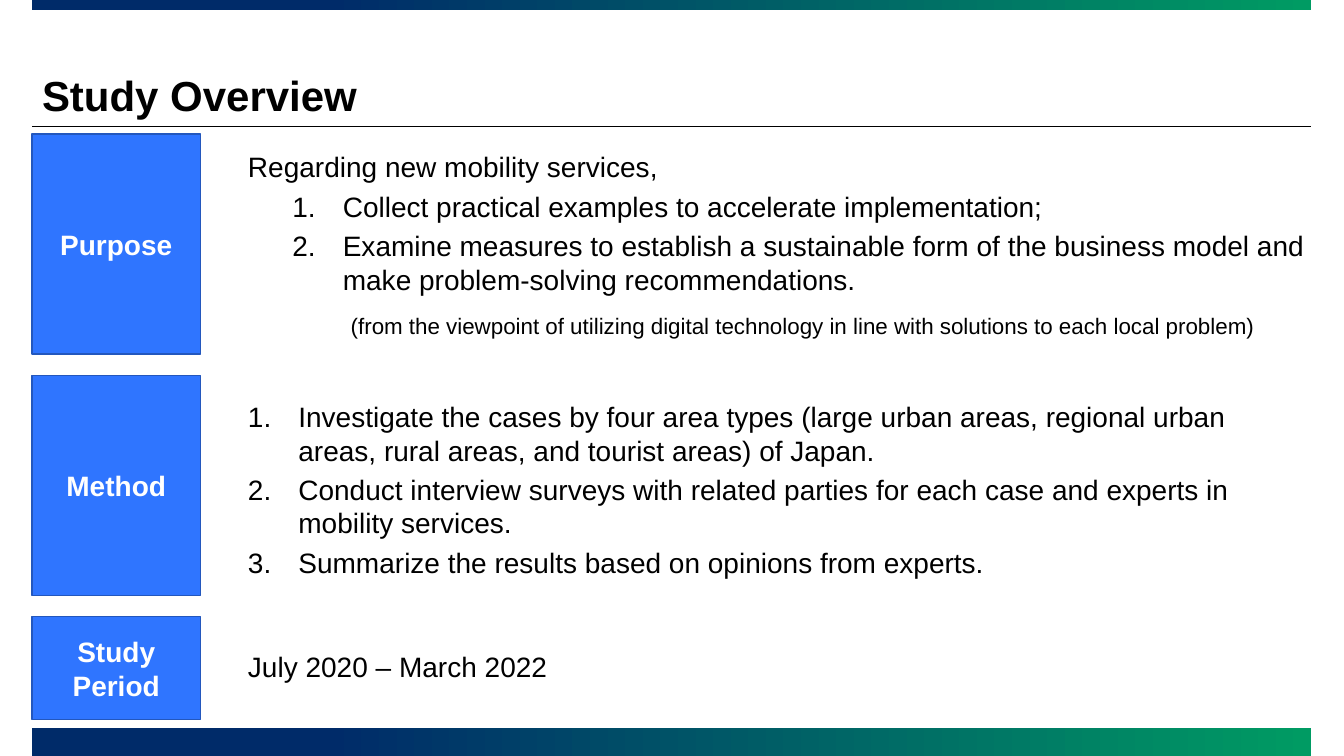
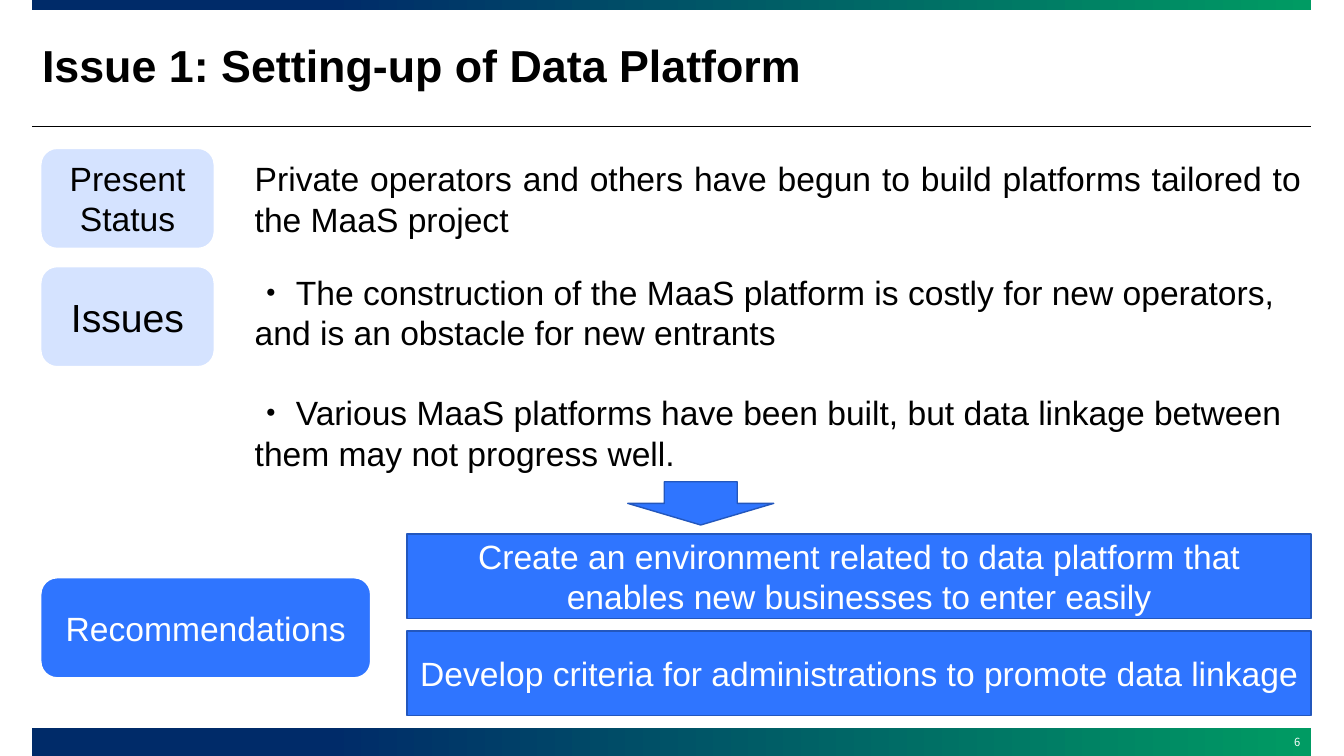
from lxml import etree
from pptx import Presentation
from pptx.dml.color import RGBColor
from pptx.enum.shapes import MSO_CONNECTOR, MSO_SHAPE
from pptx.enum.text import MSO_ANCHOR, PP_ALIGN
from pptx.oxml.ns import qn
from pptx.util import Cm, Pt

RECT, ROUNDED, DOWN_ARROW = MSO_SHAPE.RECTANGLE, MSO_SHAPE.ROUNDED_RECTANGLE, MSO_SHAPE.DOWN_ARROW
STRAIGHT = MSO_CONNECTOR.STRAIGHT
MIDDLE, BOTTOM, TOP = MSO_ANCHOR.MIDDLE, MSO_ANCHOR.BOTTOM, MSO_ANCHOR.TOP
LEFT, CENTER, RIGHT, JUSTIFY = PP_ALIGN.LEFT, PP_ALIGN.CENTER, PP_ALIGN.RIGHT, PP_ALIGN.JUSTIFY

NAVY = RGBColor(0x00, 0x2B, 0x69)
GREEN = RGBColor(0x00, 0x9B, 0x63)
BLUE = RGBColor(0x2F, 0x75, 0xFF)
EDGE_BLUE = RGBColor(0x23, 0x57, 0xBD)
PALE_BLUE = RGBColor(0xD5, 0xE3, 0xFF)
BLACK = RGBColor(0x00, 0x00, 0x00)
WHITE = RGBColor(0xFF, 0xFF, 0xFF)

LATIN, CJK = "Arial", "Noto Sans CJK JP"
MARK = "・"
EDGE, SPAN = 0.81, 32.23  # left edge and width of the page frame, cm
TIGHT = (0.15, 0.08, 0.15, 0.08)  # left, top, right, bottom insets, cm
NORMAL = (0.25, 0.13, 0.25, 0.13)


class Deck:
    """Holds the shared style and the slide being built."""

    def __init__(self):
        self.prs = Presentation()
        self.prs.slide_width, self.prs.slide_height = Cm(33.87), Cm(19.05)
        self.shapes = None

    def new_slide(self, title, size, anchor, width=SPAN, number=None):
        self.shapes = self.prs.slides.add_slide(self.prs.slide_layouts[6]).shapes
        self.band(0, 0.25)
        self.rule(3.18)
        self.band(18.35, 0.7)
        self.text((EDGE, 0.23, width, 2.95), [title], size, anchor=anchor,
                  bold=True, line_spacing=0.9)
        if number:
            self.text((26.75, 18.21, 6.27, 0.84), [number], 8, insets=(0.25, 0.13, 0.25, 0),
                      color=WHITE, name=CJK, alignment=RIGHT)

    def band(self, top, height):
        band = self.shape(RECT, (EDGE, top, SPAN, height))
        band.fill.gradient()
        band.fill.gradient_angle = 0
        for stop, color, position in zip(band.fill.gradient_stops, (NAVY, GREEN), (0.23, 1)):
            stop.color.rgb = color
            stop.position = position

    def rule(self, y):
        rule = self.shapes.add_connector(STRAIGHT, Cm(EDGE), Cm(y), Cm(EDGE + SPAN), Cm(y))
        rule.line.color.rgb = BLACK
        rule.line.width = Pt(0.5)
        etree.SubElement(rule._element.spPr, qn("a:effectLst"))

    def shape(self, kind, place, fill=None, line=None, weight=1):
        shape = self.shapes.add_shape(kind, *map(Cm, place))
        shape.shadow.inherit = False
        if fill is not None:
            shape.fill.solid()
            shape.fill.fore_color.rgb = fill
        if line is None:
            shape.line.fill.background()
        else:
            shape.line.color.rgb = line
            shape.line.width = Pt(weight)
        return shape

    def box(self, place, label, size, bold=False):
        box = self.shape(RECT, place, BLUE, EDGE_BLUE)
        self.set_text(box.text_frame, [label], size, color=WHITE, bold=bold, alignment=CENTER)

    def pill(self, place, label, size=24, fill=PALE_BLUE, color=BLACK):
        pill = self.shape(ROUNDED, place, fill, WHITE, 1.5)
        self.set_text(pill.text_frame, [label], size, color=color, alignment=CENTER)

    def text(self, place, paragraphs, size, **style):
        frame = self.shapes.add_textbox(*map(Cm, place)).text_frame
        self.set_text(frame, paragraphs, size, **style)

    def set_text(self, frame, paragraphs, size, anchor=MIDDLE, insets=NORMAL, color=BLACK,
                 bold=False, name=LATIN, alignment=LEFT, line_spacing=None, gap=0,
                 numbered_from=None, margin=1.27):
        frame.word_wrap = True
        frame.vertical_anchor = anchor
        for side, inset in zip(("left", "top", "right", "bottom"), insets):
            setattr(frame, f"margin_{side}", Cm(inset))
        font_format = {"size": Pt(size), "bold": bold, "name": name}
        for index, content in enumerate(paragraphs):
            paragraph = frame.add_paragraph() if index else frame.paragraphs[0]
            if numbered_from is not None and index >= numbered_from:
                self.number(paragraph, margin)
            paragraph_format = {"alignment": alignment, "line_spacing": line_spacing,
                                "space_before": Pt(gap if index else 0)}
            for key, value in paragraph_format.items():
                setattr(paragraph, key, value)
            # A leading mark gets its own run in the CJK font
            mark, words = (MARK, content[1:]) if content.startswith(MARK) else ("", content)
            for part in filter(None, (mark, words)):
                run = paragraph.add_run()
                run.text = part
                for key, value in font_format.items():
                    setattr(run.font, key, value)
                run.font.color.rgb = color
                if part == MARK:
                    run.font.name = CJK
                    etree.SubElement(run._r.get_or_add_rPr(), qn("a:ea"), typeface=CJK)

    @staticmethod
    def number(paragraph, margin):
        properties = paragraph._p.get_or_add_pPr()
        properties.set("marL", str(Cm(margin)))
        properties.set("indent", str(-Cm(1.27)))
        etree.SubElement(properties, qn("a:buAutoNum"), type="arabicPeriod")


def study_overview(deck):
    deck.new_slide("Study Overview", 30, BOTTOM, width=28.83)

    # Section labels
    top = 3.38
    for label, height in (("Purpose", 5.54), ("Method", 5.54), ("Study Period", 2.59)):
        deck.box((EDGE, top, 4.24, height), label, 20, bold=True)
        top += height + 0.54

    # Section contents
    body = {"size": 20, "insets": TIGHT, "gap": 4}
    deck.text((6.1, 3.94, 26.95, 3.35), [
        "Regarding new mobility services,",
        "Collect practical examples to accelerate implementation;",
        "Examine measures to establish a sustainable form of the business model and "
        "make problem-solving recommendations.",
    ], numbered_from=1, margin=2.39, **body)
    deck.text((8.69, 7.52, 24.08, 1.35), [
        "(from the viewpoint of utilizing digital technology in line with solutions "
        "to each local problem)",
    ], 16, insets=TIGHT)
    deck.text((6.1, 9.53, 26.67, 5.59), [
        "Investigate the cases by four area types (large urban areas, regional urban areas, "
        "rural areas, and tourist areas) of Japan.",
        "Conduct interview surveys with related parties for each case and experts in "
        "mobility services.",
        "Summarize the results based on opinions from experts.",
    ], numbered_from=0, **body)
    deck.text((6.1, 15.67, 21.03, 2.26), ["July 2020 – March 2022"], **body)


def data_platform(deck):
    deck.new_slide("Issue 1: Setting-up of Data Platform", 32, MIDDLE, number="6")

    # Present status and issues
    deck.pill((1.02, 3.73, 4.39, 2.54), "Present Status")
    deck.text((6.17, 3.86, 26.87, 2.31), [
        "Private operators and others have begun to build platforms tailored to "
        "the MaaS project",
    ], 24, anchor=TOP, alignment=JUSTIFY)
    deck.pill((1.02, 6.71, 4.39, 2.54), "Issues", 28)
    deck.text((6.17, 6.71, 26.87, 5.38), [
        "・ The construction of the MaaS platform is costly for new operators, "
        "and is an obstacle for new entrants",
        "・ Various MaaS platforms have been built, but data linkage between "
        "them may not progress well.",
    ], 24, anchor=TOP, gap=28.8)

    # Recommendations
    deck.shape(DOWN_ARROW, (15.82, 12.14, 3.68, 1.09), BLUE, EDGE_BLUE)
    deck.pill((1.02, 14.55, 8.33, 2.54), "Recommendations", fill=BLUE, color=WHITE)
    recommendations = (
        "Create an environment related to data platform that enables new businesses "
        "to enter easily",
        "Develop criteria for administrations to promote data linkage",
    )
    for row, recommendation in enumerate(recommendations):
        deck.box((10.26, 13.46 + row * 2.44, 22.78, 2.13), recommendation, 24)


def main():
    deck = Deck()
    study_overview(deck)
    data_platform(deck)
    deck.prs.save("out.pptx")


if __name__ == "__main__":
    main()
